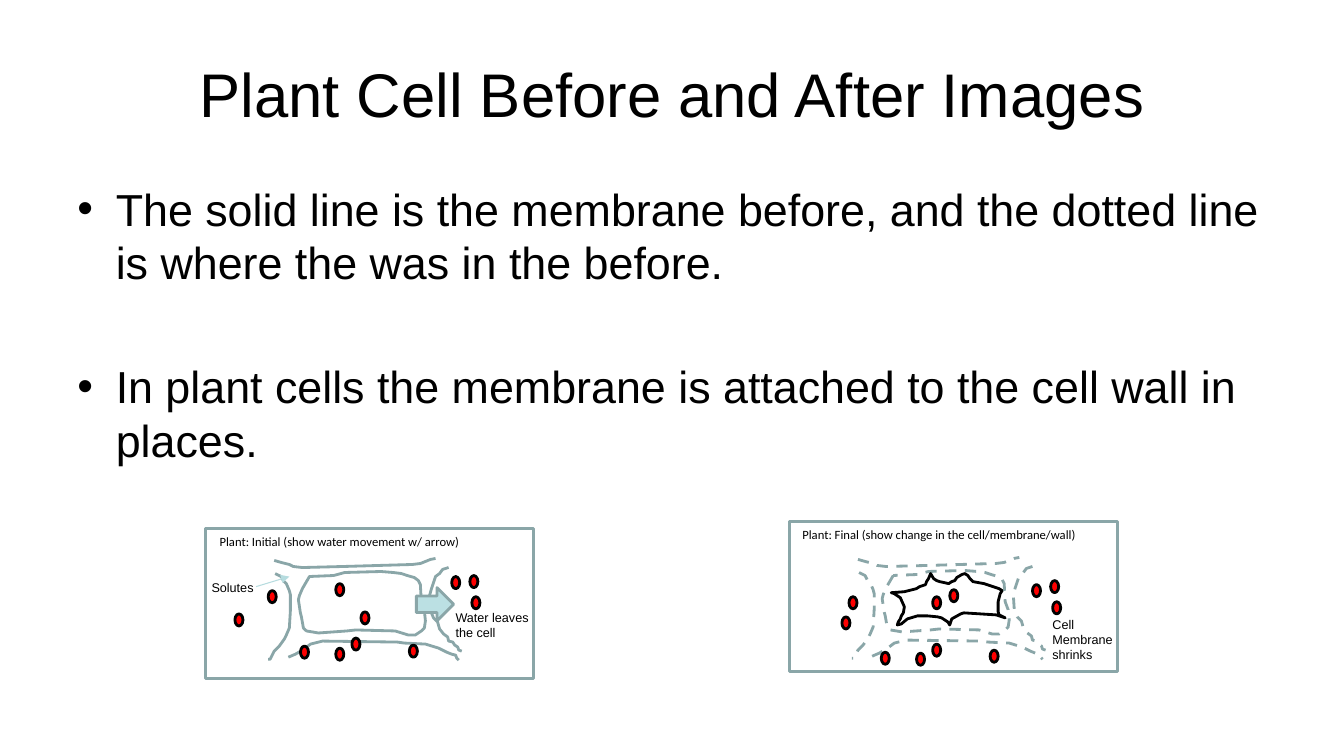
from lxml.etree import SubElement
from pptx import Presentation
from pptx.dml.color import RGBColor
from pptx.enum.dml import MSO_LINE_DASH_STYLE as DASH
from pptx.enum.shapes import MSO_CONNECTOR as CONN, MSO_SHAPE as SHAPE
from pptx.enum.text import MSO_ANCHOR as ANCHOR, PP_ALIGN as ALIGN
from pptx.oxml.ns import qn
from pptx.util import Inches, Pt

BLACK = RGBColor(0x00, 0x00, 0x00)
WHITE = RGBColor(0xFF, 0xFF, 0xFF)
RED = RGBColor(0xFF, 0x00, 0x00)
WALL_GREY = RGBColor(0x8A, 0xA6, 0xA8)
WATER = RGBColor(0xBB, 0xE0, 0xE3)
POINTER = RGBColor(0xB6, 0xDC, 0xDF)

# Offset of the final cell from the initial one
FINAL_DX, FINAL_DY = 5.79, -0.01

# Neighbouring walls of the initial cell: top, left, bottom, right
WALLS = [
    [(2.72, 5.56), (2.79, 5.58), (2.87, 5.6), (2.91, 5.62), (3, 5.63),
     (3.4, 5.62), (4.09, 5.6), (4.17, 5.59), (4.27, 5.55), (4.32, 5.54)],
    [(2.73, 5.69), (2.79, 5.72), (2.81, 5.76), (2.84, 5.79), (2.87, 5.86),
     (2.88, 5.9), (2.88, 6.06), (2.87, 6.23), (2.84, 6.3), (2.82, 6.34),
     (2.77, 6.41), (2.72, 6.46), (2.68, 6.54), (2.66, 6.54)],
    [(2.86, 6.52), (2.93, 6.49), (3, 6.45), (3.04, 6.42), (3.08, 6.39),
     (3.16, 6.37), (3.2, 6.36), (3.94, 6.37), (4.01, 6.38), (4.22, 6.39),
     (4.35, 6.43), (4.39, 6.45), (4.43, 6.47), (4.48, 6.49), (4.52, 6.5),
     (4.53, 6.53), (4.55, 6.55)],
    [(4.45, 5.63), (4.39, 5.65), (4.36, 5.69), (4.32, 5.72), (4.28, 5.84),
     (4.26, 5.91), (4.27, 6.06), (4.3, 6.13), (4.34, 6.17), (4.36, 6.24),
     (4.4, 6.29), (4.44, 6.32), (4.45, 6.36), (4.49, 6.37), (4.51, 6.4),
     (4.54, 6.42), (4.55, 6.45), (4.58, 6.46)],
]
CELL_WALL = [
    (3.07, 5.72), (3, 5.84), (2.97, 5.91), (2.96, 5.95), (2.98, 6.08),
    (2.99, 6.12), (3.01, 6.23), (3.04, 6.26), (3.16, 6.28), (3.44, 6.26),
    (3.53, 6.25), (3.92, 6.26), (4.05, 6.3), (4.12, 6.3), (4.18, 6.26),
    (4.21, 6.23), (4.22, 6.16), (4.21, 6.06), (4.18, 5.98), (4.17, 5.8),
    (4.15, 5.76), (4.11, 5.73), (4.04, 5.71), (3.98, 5.69), (3.9, 5.68),
    (3.78, 5.67), (3.42, 5.68), (3.31, 5.71),
]
SHRUNK_MEMBRANE = [
    (9.23, 5.69), (9.21, 5.74), (9.19, 5.77), (9.18, 5.8), (9.12, 5.82),
    (9.09, 5.84), (8.97, 5.87), (8.84, 5.88), (8.87, 5.89), (8.93, 5.93),
    (8.97, 6.02), (8.96, 6.08), (8.94, 6.11), (8.93, 6.14), (8.91, 6.17),
    (8.9, 6.2), (8.94, 6.19), (9, 6.14), (9.1, 6.11), (9.2, 6.11),
    (9.3, 6.12), (9.34, 6.13), (9.4, 6.17), (9.42, 6.2), (9.44, 6.14),
    (9.53, 6.09), (9.56, 6.08), (9.88, 6.1), (9.97, 6.13), (9.91, 6.1),
    (9.9, 6.07), (9.9, 5.97), (9.92, 5.89), (9.94, 5.86), (9.91, 5.84),
    (9.85, 5.82), (9.76, 5.79), (9.65, 5.77), (9.62, 5.74), (9.6, 5.71),
    (9.57, 5.69), (9.54, 5.7), (9.49, 5.73), (9.47, 5.76), (9.44, 5.77),
    (9.41, 5.79), (9.32, 5.77), (9.29, 5.76), (9.26, 5.74),
]
SOLUTES = [
    # Initial cell
    (3.49, 6.33), (2.66, 5.86), (4.66, 5.71), (4.48, 5.72), (2.33, 6.09),
    (4.68, 5.92), (3.33, 6.43), (3.33, 5.79), (3.58, 6.07), (4.06, 6.4),
    (2.98, 6.41),
    # Final cell
    (9.25, 6.39), (8.42, 5.92), (10.42, 5.76), (10.24, 5.8), (9.25, 5.92),
    (10.44, 5.97), (9.09, 6.48), (9.42, 5.85), (8.35, 6.12), (9.82, 6.45),
    (8.74, 6.47),
]


def write(p, text, size=9, font="Arial", color=BLACK, align=ALIGN.LEFT,
          before=0, line=1.0):
    p.alignment, p.line_spacing, p.space_before = align, line, Pt(before)
    r = p.add_run()
    r.text = text
    r.font.size, r.font.name = Pt(size), font
    r.font.color.rgb = color


def add_box(shapes, x, y, w, h):
    tf = shapes.add_textbox(*map(Inches, (x, y, w, h))).text_frame
    tf.word_wrap = True
    return tf


def add_label(shapes, text, x, y, w, h, **fmt):
    write(add_box(shapes, x, y, w, h).paragraphs[0], text, **fmt)


def add_bullet(p, text, **fmt):
    write(p, text, **fmt)
    pPr = p._p.get_or_add_pPr()
    indent = Inches(0.38)
    pPr.set("marL", str(indent))
    pPr.set("indent", str(-indent))
    SubElement(pPr, qn("a:buFont")).set("typeface", "Arial")
    SubElement(pPr, qn("a:buChar")).set("char", "•")


def add_preset(shapes, kind, x, y, w, h, fill, line):
    sp = shapes.add_shape(kind, *map(Inches, (x, y, w, h)))
    sp.shadow.inherit = False
    sp.fill.solid()
    sp.fill.fore_color.rgb = fill
    sp.line.color.rgb, sp.line.width = line, Pt(2)


def add_outline(shapes, points, color, close=False, dash=None, dx=0, dy=0):
    pts = [(Inches(x + dx), Inches(y + dy)) for x, y in points]
    fb = shapes.build_freeform(*pts[0])
    fb.add_line_segments(pts[1:], close=close)
    sp = fb.convert_to_shape()
    sp.shadow.inherit = False
    sp.fill.background()
    sp.line.color.rgb, sp.line.width = color, Pt(2)
    if dash:
        sp.line.dash_style = dash


def add_pointer(shapes, x1, y1, x2, y2):
    c = shapes.add_connector(CONN.STRAIGHT, *map(Inches, (x1, y1, x2, y2)))
    c.line.color.rgb, c.line.width = POINTER, Pt(0.75)
    SubElement(c.line._get_or_add_ln(), qn("a:tailEnd")).set("type", "triangle")
    SubElement(c._element.spPr, qn("a:effectLst"))


def add_panel(s, x, y, caption, caption_x, caption_w, **fmt):
    shapes = s.shapes.add_group_shape().shapes
    add_preset(shapes, SHAPE.RECTANGLE, x, y, 3.25, 1.49, WHITE, WALL_GREY)
    add_label(shapes, caption, caption_x, y, caption_w, 0.3,
              font="Calibri", line=1.07)
    for wall in WALLS:
        add_outline(shapes, wall, WALL_GREY, **fmt)
    add_outline(shapes, CELL_WALL, WALL_GREY, close=True, **fmt)


def main():
    prs = Presentation()
    prs.slide_width, prs.slide_height = Inches(13.33), Inches(7.5)
    s = prs.slides.add_slide(prs.slide_layouts[5])

    # Title
    title = s.shapes.title
    title.left, title.top = Inches(0.67), Inches(0.3)
    title.width, title.height = Inches(12), Inches(1.25)
    title.text_frame.vertical_anchor = ANCHOR.MIDDLE
    write(title.text_frame.paragraphs[0], "Plant Cell Before and After Images",
          size=44, align=ALIGN.CENTER)

    # Bullets
    tf = add_box(s.shapes, 0.67, 1.75, 12, 4.95)
    add_bullet(tf.paragraphs[0], "The solid line is the membrane before, and "
               "the dotted line is where the was in the before.",
               size=32, before=6.4)
    add_bullet(tf.add_paragraph(), "In plant cells the membrane is attached "
               "to the cell wall in places.", size=32, before=50)

    # Cells before and after
    add_panel(s, 2.04, 5.24, "Plant: Initial (show water movement w/ arrow)",
              2.08, 2.97)
    add_panel(s, 7.83, 5.17,
              "Plant: Final (show change in the cell/membrane/wall)",
              7.86, 3.13, dash=DASH.DASH, dx=FINAL_DX, dy=FINAL_DY)

    # Water arrow, labels and solutes
    add_preset(s.shapes, SHAPE.RIGHT_ARROW, 4.13, 5.83, 0.37, 0.33,
               WATER, WALL_GREY)
    add_label(s.shapes, "Water leaves the cell", 4.42, 6, 1, 0.4)
    add_label(s.shapes, "Cell Membrane shrinks", 10.34, 6.07, 0.83, 0.56)
    for x, y in SOLUTES:
        add_preset(s.shapes, SHAPE.OVAL, x, y, 0.08, 0.12, RED, BLACK)
    add_label(s.shapes, "Solutes", 2, 5.7, 0.66, 0.19)
    add_pointer(s.shapes, 2.54, 5.82, 2.87, 5.72)

    # Membrane after shrinking
    add_outline(s.shapes, SHRUNK_MEMBRANE, BLACK, close=True)

    prs.save("out.pptx")


if __name__ == "__main__":
    main()
